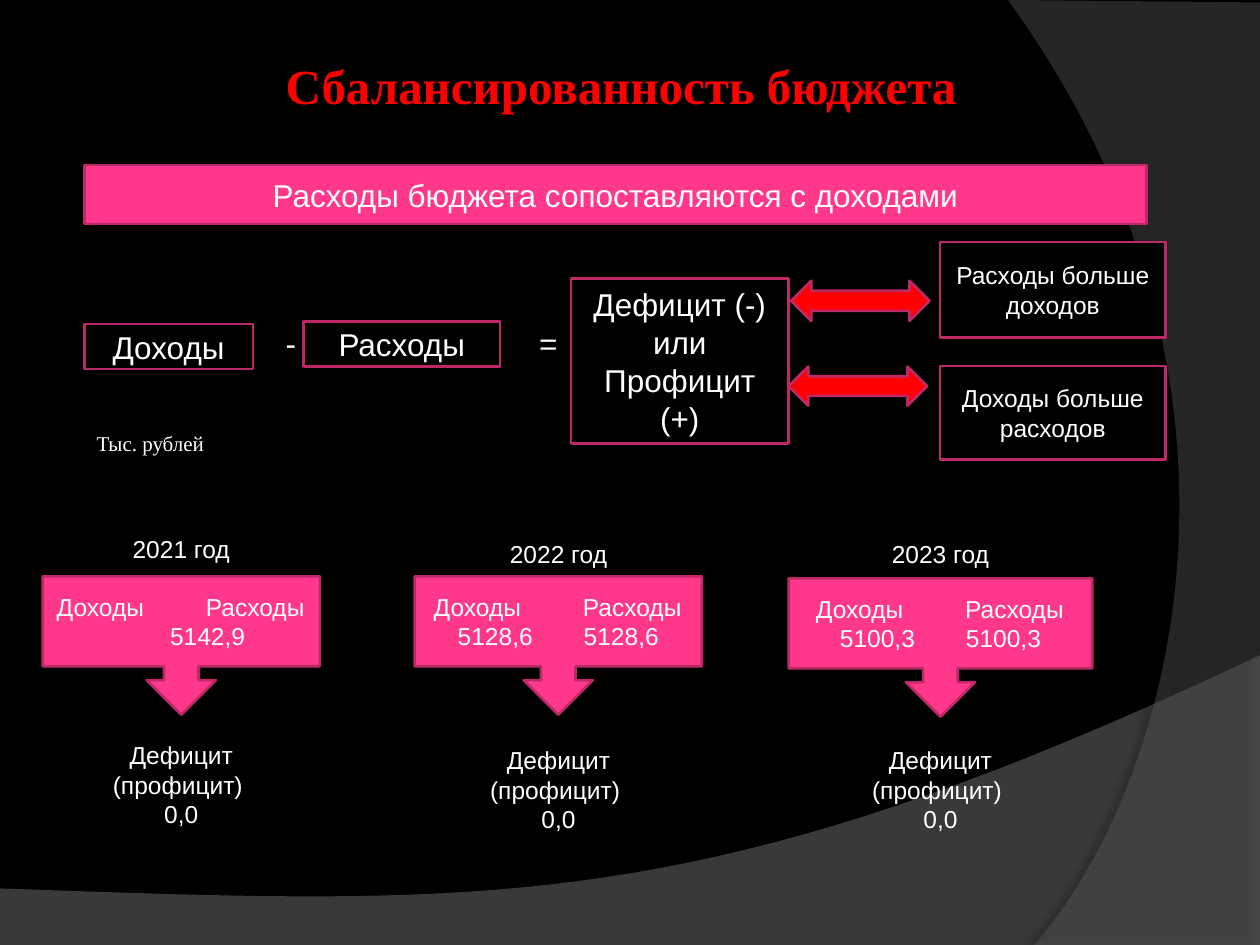
from dataclasses import dataclass

from lxml.etree import SubElement
from pptx import Presentation
from pptx.dml.color import RGBColor
from pptx.enum.shapes import MSO_SHAPE as Shape
from pptx.enum.text import MSO_ANCHOR as Anchor, PP_ALIGN as Align
from pptx.oxml.ns import qn
from pptx.util import Cm, Pt


@dataclass(frozen=True)
class Theme:
    """Colours, fonts and type sizes of the slide."""
    black: str = "000000"
    white: str = "FFFFFF"
    red: str = "FF0000"
    pink: str = "FF388C"
    border: str = "BD2968"
    wave: str = "7F7F7F"
    arc: str = "5E5E5E"
    sans: str = "Arial"
    serif: str = "Times New Roman"
    title: int = 28
    large: int = 18
    small: int = 14
    note: int = 12
    outline: float = 1.5


THEME = Theme()


def bezier(start, first, second, end, steps=40):
    """Return points along a cubic curve, without its start."""
    points = []
    for step in range(1, steps + 1):
        t = step / steps
        weights = ((1 - t) ** 3, 3 * t * (1 - t) ** 2, 3 * t * t * (1 - t), t ** 3)
        controls = (start, first, second, end)
        points.append(tuple(sum(w * c[axis] for w, c in zip(weights, controls))
                            for axis in (0, 1)))
    return points


def add_swoosh(slide, points, color, opacity, shadow):
    """Add a translucent background outline with a soft shadow."""
    corners = [(Cm(x), Cm(y)) for x, y in points]
    builder = slide.shapes.build_freeform(*corners[0])
    builder.add_line_segments(corners[1:], close=True)
    swoosh = builder.convert_to_shape()
    swoosh.line.fill.background()
    swoosh.fill.solid()
    swoosh.fill.fore_color.rgb = RGBColor.from_string(color)
    tint = swoosh.element.spPr.find(qn("a:solidFill"))[0]
    SubElement(tint, qn("a:alpha"), val=str(opacity * 1000))
    swoosh.shadow.inherit = False
    density, blur, distance, angle = shadow
    effects = swoosh.element.spPr.find(qn("a:effectLst"))
    outer = SubElement(effects, qn("a:outerShdw"), blurRad=str(Pt(blur)),
                       dist=str(Pt(distance)), dir=str(angle * 60000),
                       algn="ctr", rotWithShape="0")
    shade = SubElement(outer, qn("a:srgbClr"), val=THEME.black)
    SubElement(shade, qn("a:alpha"), val=str(density * 1000))


def style(paragraph, size, align=Align.CENTER, font=THEME.sans, color=THEME.white):
    """Set the alignment and font of a paragraph."""
    paragraph.alignment = align
    paragraph.font.size = Pt(size)
    paragraph.font.name = font
    paragraph.font.color.rgb = RGBColor.from_string(color)


def add_block(slide, kind, box, fill):
    """Add an outlined preset shape."""
    block = slide.shapes.add_shape(kind, *map(Cm, box))
    block.shadow.inherit = False
    block.fill.solid()
    block.fill.fore_color.rgb = RGBColor.from_string(fill)
    block.line.color.rgb = RGBColor.from_string(THEME.border)
    block.line.width = Pt(THEME.outline)
    return block


def add_box(slide, box, text, size, fill=THEME.black, kind=Shape.RECTANGLE):
    """Add an outlined shape with centred text."""
    frame = add_block(slide, kind, box, fill).text_frame
    frame.word_wrap = True
    frame.vertical_anchor = Anchor.MIDDLE
    frame.text = text
    style(frame.paragraphs[0], size)


def add_label(slide, box, text, size, wrap=True, **look):
    """Add plain text and return its frame."""
    frame = slide.shapes.add_textbox(*map(Cm, box)).text_frame
    frame.word_wrap = wrap
    frame.text = text
    for paragraph in frame.paragraphs:
        style(paragraph, size, **look)
    return frame


def add_title(slide, text):
    """Add the slide title."""
    title = add_label(slide, (3.3, 0.96, 18.31, 1.5), text, THEME.title,
                      font=THEME.serif, color=THEME.red)
    title.vertical_anchor = Anchor.MIDDLE
    title.margin_left = Cm(0.38)
    title.paragraphs[0].font.bold = True


def add_result(slide, box, year):
    """Add a year heading with the balance beneath the callout."""
    lines = f"{year} год\nДефицит\n(профицит) \n0,0"
    result = add_label(slide, box, lines, THEME.small)
    result.paragraphs[1].space_before = Pt(101)


def add_callout(slide, box, amounts):
    """Add a callout with income and expense amounts in centred columns."""
    frame = add_block(slide, Shape.DOWN_ARROW_CALLOUT, box, THEME.pink).text_frame
    frame.word_wrap = True
    frame.vertical_anchor = Anchor.MIDDLE
    middle = box[2] / 2 - 0.25
    offsets = (-1.27, 1.27) if len(amounts) == 2 else (0.53,)
    rows = ((("Доходы", "Расходы"), (-1.63, 1.49)), (amounts, offsets))
    frame.text = "\n".join("\t" + "\t".join(words) for words, _ in rows)
    for paragraph, (_, stops) in zip(frame.paragraphs, rows):
        style(paragraph, THEME.small, Align.LEFT)
        properties = paragraph.font._element.getparent()
        tabs = SubElement(properties, qn("a:tabLst"))
        properties.insert(0, tabs)
        for stop in stops:
            SubElement(tabs, qn("a:tab"), pos=str(Cm(middle + stop)), algn="ctr")


def main():
    """Build and save the slide."""
    deck = Presentation()
    deck.slide_width, deck.slide_height = Cm(25.4), Cm(19.05)
    slide = deck.slides.add_slide(deck.slide_layouts[6])
    slide.background.fill.solid()
    slide.background.fill.fore_color.rgb = RGBColor.from_string(THEME.black)

    wave = [(0, 17.91), (0, 19.05), (25.4, 19.05), (25.4, 13.21)]
    wave += bezier(wave[-1], (14.2, 18.52), (9.93, 18.26), wave[0])
    add_swoosh(slide, wave, THEME.wave, 45, (35, 4, 3.5, 270))
    arc = [(25.4, 0.05), (25.4, 19.05), (20.85, 19.05)]
    arc += bezier(arc[-1], (23.75, 15.72), (25.86, 7.62), (20.32, 0))
    add_swoosh(slide, arc, THEME.arc, 40, (45, 4, 4, 180))

    add_title(slide, "Сбалансированность бюджета")
    add_box(slide, (1.7, 3.33, 21.41, 1.19),
            "Расходы бюджета сопоставляются с доходами", THEME.large, THEME.pink)
    add_box(slide, (1.7, 6.53, 3.4, 0.91), "Доходы", THEME.large)
    add_label(slide, (5.51, 6.4, 0.74, 1.02), "-", THEME.large, False, align=Align.LEFT)
    add_box(slide, (6.12, 6.48, 3.96, 0.91), "Расходы", THEME.large)
    add_label(slide, (10.62, 6.4, 0.64, 1.02), "=", THEME.large, False, align=Align.LEFT)
    add_box(slide, (11.51, 5.61, 4.39, 3.33), "Дефицит (-) или Профицит (+)",
            THEME.large, kind=Shape.FLOWCHART_PROCESS)

    outcomes = (
        ("Расходы больше доходов", (18.95, 4.88, 4.55, 1.93), (15.95, 5.66, 2.79, 0.81)),
        ("Доходы больше расходов", (18.95, 7.38, 4.55, 1.88), (15.9, 7.39, 2.79, 0.79)),
    )
    for outcome, box, arrow in outcomes:
        add_block(slide, Shape.LEFT_RIGHT_ARROW, arrow, THEME.red)
        add_box(slide, box, outcome, THEME.small, kind=Shape.FLOWCHART_PROCESS)

    add_label(slide, (1.7, 8.56, 2.69, 0.76), "Тыс. рублей", THEME.note, False,
              align=Align.LEFT, font=THEME.serif)

    years = (
        (2021, (0.62, 10.64, 6.07, 6.25), (0.86, 11.62, 5.59, 2.79), ("5142,9",)),
        (2022, (8.06, 10.74, 6.4, 6.25), (8.36, 11.62, 5.79, 2.79), ("5128,6", "5128,6")),
        (2023, (15.9, 10.74, 6.12, 6.25), (15.9, 11.66, 6.12, 2.79), ("5100,3", "5100,3")),
    )
    for year, result, callout, amounts in years:
        add_result(slide, result, year)
        add_callout(slide, callout, amounts)

    deck.save("out.pptx")


if __name__ == "__main__":
    main()
